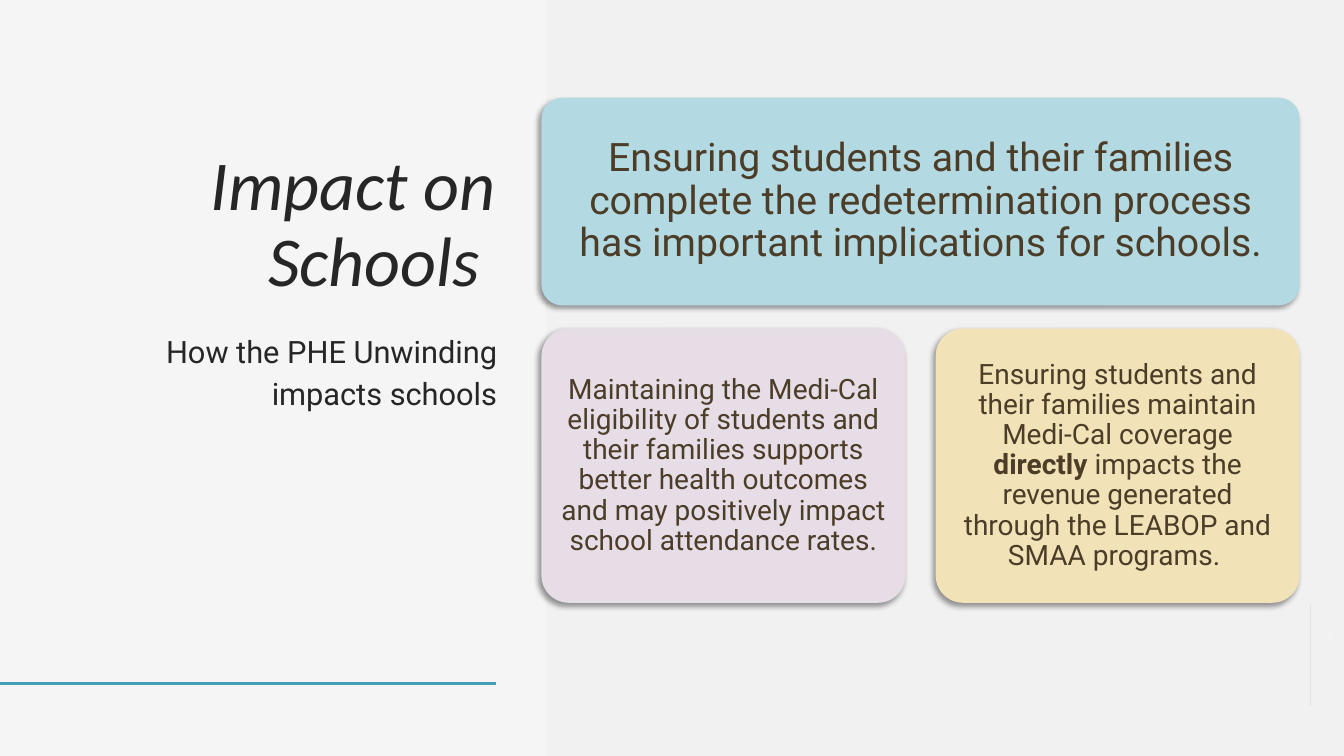
import math
from lxml import etree
from pptx import Presentation
from pptx import util as u
from pptx.dml.color import RGBColor
from pptx.enum import shapes, text
from pptx.oxml import ns

WIDTH, HEIGHT = 13.33, 7.5
INK, BROWN, PALE = "262626", "4B3D28", "F5F5F5"
TITLE = "Impact on Schools "
SUBTITLE = "How the PHE Unwinding impacts schools"
PAGE_NUMBER = "5"
CARDS = [
    {"row": 0, "column": 0, "columns": 2, "fill": "B3D9E3", "size": 28, "inset": 0.12,
     "runs": [("Ensuring students and their families complete the redetermination process "
               "has important implications for schools.", False)]},
    {"row": 1, "column": 0, "columns": 1, "fill": "E7DDE7", "size": 20, "inset": 0.08,
     "runs": [("Maintaining the Medi-Cal eligibility of students and their families supports "
               "better health outcomes and may positively impact school attendance rates.", False)]},
    {"row": 1, "column": 1, "columns": 1, "fill": "F1E2B8", "size": 20, "inset": 0.08,
     "runs": [("Ensuring students and their families maintain Medi-Cal coverage ", False),
              ("directly", True),
              (" impacts the revenue generated through the LEABOP and SMAA programs. ", False)]},
]
GRID_LEFT, GRID_TOP = 5.37, 0.97
CARD_WIDTH, COLUMN_GAP, ROW_GAP = 3.61, 0.3, 0.23
ROW_HEIGHTS = [2.06, 2.72]
RADIUS, BADGE_Y = 0.45, 6.33


def color(value):
    return RGBColor.from_string(value)


def inches(*lengths):
    return [u.Inches(length) for length in lengths]


def paint(shape, value):
    shape.shadow.inherit = False
    shape.fill.solid()
    shape.fill.fore_color.rgb = color(value)
    shape.line.fill.background()


def write(shape, runs, size, font, value, align, anchor, spacing=1.0, italic=False):
    frame = shape.text_frame
    frame.word_wrap = True
    frame.auto_size = text.MSO_AUTO_SIZE.NONE
    frame.vertical_anchor = anchor
    para = frame.paragraphs[0]
    para.alignment = align
    para.line_spacing = spacing
    para.space_before = u.Pt(0)
    for words, bold in runs:
        span = para.add_run()
        span.text = words
        span.font.size = u.Pt(size)
        span.font.name = font
        span.font.bold = bold
        span.font.italic = italic
        span.font.color.rgb = color(value)


def element(parent, tag, **attributes):
    return etree.SubElement(parent, ns.qn(tag), attributes)


def add_badge(page):
    steps = 48
    angles = [math.pi * (0.5 + step / steps) for step in range(steps + 1)]
    points = [(WIDTH + RADIUS * math.cos(a), BADGE_Y + RADIUS * math.sin(a)) for a in angles]
    builder = page.shapes.build_freeform(*points[0], scale=u.Inches(1))
    builder.add_line_segments(points[1:], close=True)
    paint(builder.convert_to_shape(), "224F5C")


def add_rule(page):
    rule = page.shapes.add_connector(shapes.MSO_CONNECTOR.STRAIGHT, *inches(0, 6.78, 4.92, 6.78))
    rule.line.color.rgb = color("439EB7")
    rule.line.width = u.Pt(2)
    element(rule._element.spPr, "a:effectLst")


def add_panel(page):
    left = 5.42
    panel = page.shapes.add_shape(shapes.MSO_SHAPE.RECTANGLE, *inches(left, 0, WIDTH - left, HEIGHT))
    paint(panel, "E9E7E9")
    tint = panel._element.spPr.find(".//" + ns.qn("a:srgbClr"))
    element(tint, "a:alpha", val="25000")


def add_card(page, card):
    row, columns = card["row"], card["columns"]
    left = GRID_LEFT + card["column"] * (CARD_WIDTH + COLUMN_GAP)
    top = GRID_TOP + sum(ROW_HEIGHTS[:row]) + row * ROW_GAP
    width = columns * CARD_WIDTH + (columns - 1) * COLUMN_GAP
    box = page.shapes.add_shape(shapes.MSO_SHAPE.ROUNDED_RECTANGLE,
                                *inches(left, top, width, ROW_HEIGHTS[row]))
    box.adjustments[0] = 0.1
    paint(box, card["fill"])
    effects = box._element.spPr.find(ns.qn("a:effectLst"))
    shadow = element(effects, "a:outerShdw", blurRad=str(u.Pt(4)), dist=str(u.Pt(3)),
                     dir=str(135 * 60000), rotWithShape="0")
    element(element(shadow, "a:srgbClr", val="000000"), "a:alpha", val="40000")
    frame = box.text_frame
    frame.margin_left = frame.margin_right = u.Inches(card["inset"])
    frame.margin_top = frame.margin_bottom = u.Inches(card["inset"])
    write(box, card["runs"], card["size"], "Roboto", BROWN,
          text.PP_ALIGN.CENTER, text.MSO_ANCHOR.MIDDLE, 0.9)


def main():
    deck = Presentation()
    deck.slide_width, deck.slide_height = inches(WIDTH, HEIGHT)
    page = deck.slides.add_slide(deck.slide_layouts[5])
    page.background.fill.solid()
    page.background.fill.fore_color.rgb = color(PALE)
    right = text.PP_ALIGN.RIGHT

    add_badge(page)
    add_rule(page)
    add_panel(page)

    title = page.shapes.title
    title.left, title.top, title.width, title.height = inches(0.83, 0.61, 4.19, 2.43)
    write(title, [(TITLE, False)], 50, "Calibri", INK, right, text.MSO_ANCHOR.BOTTOM, 0.9, True)

    subtitle = page.shapes.add_textbox(*inches(0.83, 3.21, 4.2, 3.12))
    write(subtitle, [(SUBTITLE, False)], 22, "Roboto", INK, right, text.MSO_ANCHOR.TOP, 1.12)

    number = page.shapes.add_textbox(*inches(WIDTH - RADIUS, BADGE_Y - 0.2, RADIUS, 0.4))
    write(number, [(PAGE_NUMBER, False)], 12, "TeX Gyre Schola", PALE, right,
          text.MSO_ANCHOR.MIDDLE, italic=True)

    for card in CARDS:
        add_card(page, card)
    deck.save("out.pptx")


if __name__ == "__main__":
    main()
